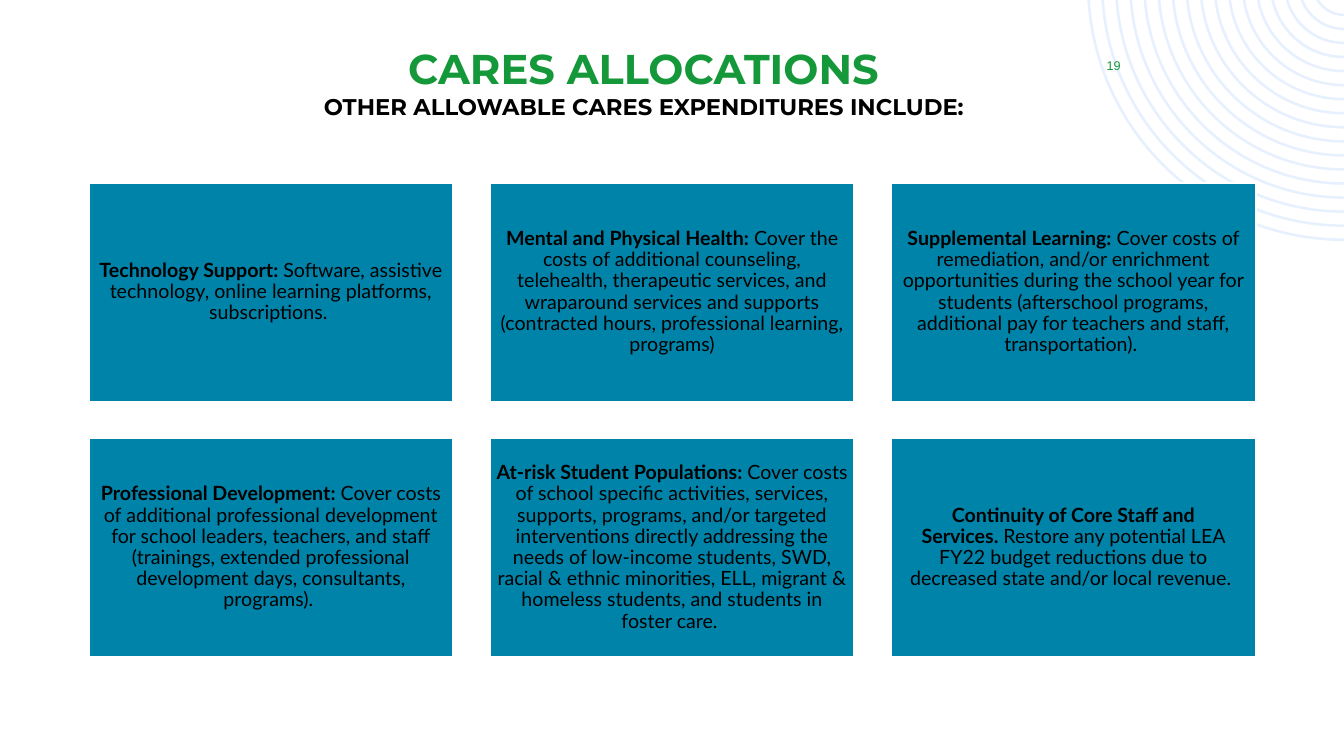
import math
import pptx
import pptx.util
import pptx.dml.color
import pptx.enum.shapes
import pptx.enum.text
import pptx.oxml.ns

Pt = pptx.util.Pt
Color = pptx.dml.color.RGBColor
Anchor = pptx.enum.text.MSO_ANCHOR
Align = pptx.enum.text.PP_ALIGN
qn = pptx.oxml.ns.qn

GREEN = Color(0x15, 0x98, 0x39)
BLUE = Color(0x00, 0x83, 0xA9)
PALE = Color(0xE6, 0xF0, 0xFE)
BLACK = Color(0, 0, 0)
WHITE = Color(255, 255, 255)
GLUE = chr(160)

TITLE = [
    [("CARES ALLOCATIONS", {"name": "Montserrat", "size": Pt(29.7), "bold": True}, GREEN)],
    [("OTHER ALLOWABLE CARES EXPENDITURES INCLUDE:",
      {"name": "Montserrat", "size": Pt(16.2), "bold": True}, BLACK)],
]
NUMBER = [[("19", {"name": "Arial", "size": Pt(9), "bold": False}, GREEN)]]
CARDS = [
    ("Technology Support:",
     "Software, assistive technology, online learning platforms, subscriptions. "),
    ("Mental and Physical Health:",
     "Cover the costs of additional counseling, telehealth, therapeutic services, and "
     "wraparound services and supports (contracted hours, professional learning, programs)"),
    ("Supplemental Learning:",
     "Cover costs of remediation, and/or enrichment opportunities during the school year for "
     "students (afterschool programs, additional pay for teachers and staff, transportation). "),
    ("Professional Development:",
     "Cover costs of additional professional development for school leaders, teachers, and "
     "staff (trainings, extended professional development days, consultants, programs). "),
    ("At-risk Student Populations:",
     "Cover costs of school specific activities, services, supports, programs, and/or targeted "
     "interventions directly addressing the needs of low-income students, SWD, racial & ethnic "
     "minorities, ELL, migrant & homeless students, and students in foster care. "),
    ("Continuity of Core Staff and Services.",
     "Restore any potential LEA FY22 budget reductions due to decreased state and/or local "
     "revenue. "),
]

WIDE, HIGH = 960, 540
COLS = 3
LEFT, TOP = 63.2, 130.6
CARD_W, CARD_H = 260.6, 156.3
STEP_X, STEP_Y = 286.6, 182.4
RINGS, FIRST, GAP, THICK = 17, 23, 10.04, 1.8
RISE = 11.5


def put_text(shape, lines, inset, anchor, space):
    frame = shape.text_frame
    values = {"word_wrap": True, "vertical_anchor": anchor}
    for side in ("left", "right", "top", "bottom"):
        values["margin_" + side] = Pt(inset[side in ("top", "bottom")])
    for key, value in values.items():
        setattr(frame, key, value)
    para = frame.paragraphs[0]
    para.alignment = Align.CENTER
    para.line_spacing = space
    for i, line in enumerate(lines):
        if i:
            para.add_line_break()
        for text, style, color in line:
            run = para.add_run()
            run.text = text
            for key, value in style.items():
                setattr(run.font, key, value)
            run.font.color.rgb = color


def add_text(slide, box, lines, anchor):
    shape = slide.shapes.add_textbox(*map(Pt, box))
    put_text(shape, lines, (7.2, 3.6), anchor, 1.0)


def arc(radius):
    turn = math.asin(RISE / radius)
    pull = 4 / 3 * math.tan((math.pi / 2 - turn) / 4)
    cos, sin = math.cos(turn), math.sin(turn)
    spots = [(cos, sin), (cos - pull * sin, sin + pull * cos), (pull, 1), (0, 1)]
    return [(Pt(WIDE - radius * x), Pt(radius * y - RISE)) for x, y in spots]


def bend(shape):
    steps = list(shape.element.iter(qn("a:lnTo")))
    for i in range(0, len(steps), 7):
        for first in (i, i + 4):
            curve = steps[first].makeelement(qn("a:cubicBezTo"), {})
            steps[first].addprevious(curve)
            for step in steps[first:first + 3]:
                curve.append(step[0])
                step.getparent().remove(step)


def add_rings(slide):
    pen = None
    for i in range(RINGS):
        radius = FIRST + GAP * i
        points = arc(radius) + arc(radius - THICK)[::-1]
        if pen is None:
            pen = slide.shapes.build_freeform(*points[0], scale=1.0)
        else:
            pen.move_to(*points[0])
        pen.add_line_segments(points[1:-1], close=False)
        pen.add_line_segments(points[-1:], close=True)
    rings = pen.convert_to_shape()
    bend(rings)
    rings.shadow.inherit = False
    rings.fill.solid()
    rings.fill.fore_color.rgb = PALE
    rings.line.fill.background()


def add_card(slide, index, head, body):
    row, col = divmod(index, COLS)
    box = (LEFT + col * STEP_X, TOP + row * STEP_Y, CARD_W, CARD_H)
    card = slide.shapes.add_shape(
        pptx.enum.shapes.MSO_SHAPE.RECTANGLE, *map(Pt, box))
    card.shadow.inherit = False
    card.fill.solid()
    card.fill.fore_color.rgb = BLUE
    card.line.color.rgb = WHITE
    card.line.width = Pt(1.5)
    style = {"name": "Lato", "size": Pt(14)}
    line = [(head + GLUE, {**style, "bold": True}, BLACK),
            (body, {**style, "bold": False}, BLACK)]
    put_text(card, [line], (4.2, 4.2), Anchor.MIDDLE, 0.9)


def main():
    deck = pptx.Presentation()
    deck.slide_width, deck.slide_height = Pt(WIDE), Pt(HIGH)
    slide = deck.slides.add_slide(deck.slide_layouts[6])
    add_rings(slide)
    add_text(slide, (144.7, 27.4, 630, 60.5), TITLE, Anchor.TOP)
    add_text(slide, (766.3, 36, 58.3, 21.6), NUMBER, Anchor.MIDDLE)
    for index, (head, body) in enumerate(CARDS):
        add_card(slide, index, head, body)
    deck.save("out.pptx")


if __name__ == "__main__":
    main()
